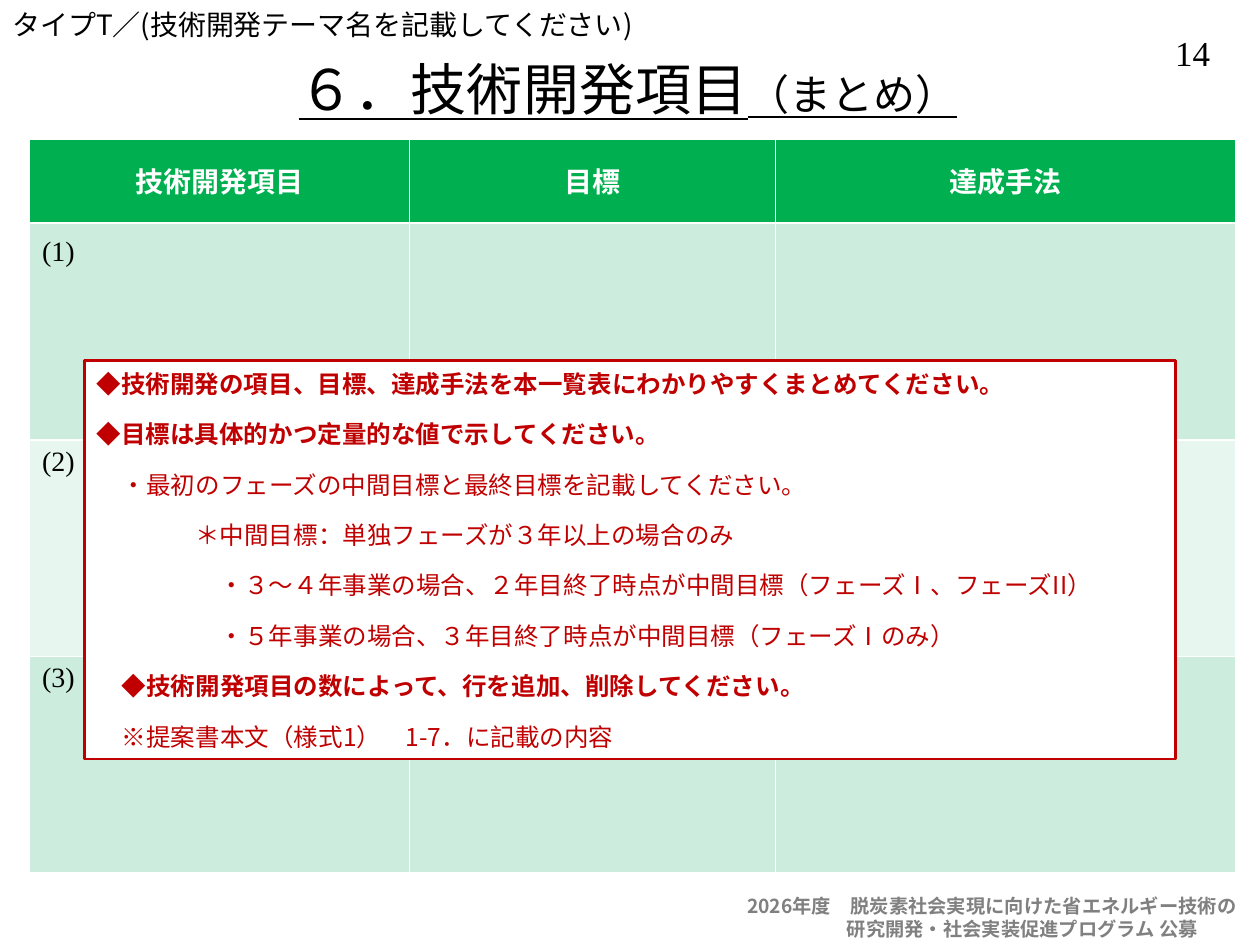
import pptx
import pptx.util
import pptx.dml.color
import pptx.enum.shapes
import pptx.enum.text
import pptx.oxml

Pt = pptx.util.Pt
PP = pptx.enum.text.PP_ALIGN
MID = pptx.enum.text.MSO_ANCHOR.MIDDLE
GOTHIC = "Noto Sans CJK JP"
SERIF = "Times New Roman"
NS = 'xmlns:a="http://schemas.openxmlformats.org/drawingml/2006/main"'


def rgb(value):
    return pptx.dml.color.RGBColor.from_string(value)


def style(r, size, color, bold=False, font=GOTHIC):
    r.font.size = Pt(size)
    r.font.color.rgb = rgb(color)
    r.font.bold = bold
    r.font.name = font
    ea = pptx.oxml.parse_xml(f'<a:ea {NS} typeface="{GOTHIC}"/>')
    r.font._element.find(pptx.oxml.ns.qn("a:latin")).addnext(ea)


prs = pptx.Presentation()
prs.slide_width, prs.slide_height = Pt(720), Pt(540)
s = prs.slides.add_slide(prs.slide_layouts[6])

# Page number, theme line, footer and title: box, size, colour, bold, font,
# alignment, and paragraphs as (left indent, text)
texts = [
    ((658, 13, 47, 31), 20, "000000", False, SERIF, PP.CENTER, [(0, "14")]),
    ((0, -0.7, 605, 27), 16, "000000", False, GOTHIC, PP.LEFT,
     [(0, "タイプT／(技術開発テーマ名を記載してください)")]),
    ((419.8, 506.2, 300.2, 33.8), 11, "808080", True, GOTHIC, PP.LEFT,
     [(0, "2026年度　脱炭素社会実現に向けた省エネルギー技術の"),
      (57, "研究開発・社会実装促進プログラム 公募")]),
    ((53, 25.2, 612, 50.4), 32, "000000", False, GOTHIC, PP.CENTER,
     [(0, "６．技術開発項目")]),
]
for box, size, color, bold, font, align, lines in texts:
    sp = s.shapes.add_textbox(*map(Pt, box))
    tf = sp.text_frame
    tf.word_wrap = True
    tf.margin_top = Pt(4.8)
    for i, (indent, text) in enumerate(lines):
        p = tf.add_paragraph() if i else tf.paragraphs[0]
        p.text = text
        p.alignment = align
        p.line_spacing = Pt(size * 1.2)
        if indent:
            p._p.get_or_add_pPr().set("marL", str(Pt(indent)))
        style(p.runs[0], size, color, bold, font)

# The title, last in the list, ends in a smaller run and is underlined
tf.vertical_anchor = MID
tf.margin_top = Pt(3.6)
r = p.add_run()
r.text = "（まとめ）"
style(r, 24, "000000")
for r in p.runs:
    r.font.underline = True

# Summary table
rows = [["技術開発項目", "目標", "達成手法"],
        ["(1)　", "", ""], ["(2)", "", ""], ["(3)", "", ""]]
fills = ["00B050", "CCECDE", "E7F6EF", "CCECDE"]
widths = [217.2, 209.2, 262.8]
heights = [48.7, 123.8, 123.8, 123.8]
rules = [3, 1.5, 1, 1, 1]  # horizontal rules from top to bottom
table = s.shapes.add_table(4, 3, Pt(16.8), Pt(78.8),
                           Pt(sum(widths)), Pt(sum(heights))).table
for col, width in zip(table.columns, widths):
    col.width = Pt(width)
for i, row in enumerate(rows):
    table.rows[i].height = Pt(heights[i])
    for j, text in enumerate(row):
        cell = table.cell(i, j)
        tcPr = cell._tc.get_or_add_tcPr()
        for side, w in zip("LRTB", (1, 1, rules[i], rules[i + 1])):
            tcPr.append(pptx.oxml.parse_xml(
                f'<a:ln{side} {NS} w="{Pt(w)}"><a:solidFill>'
                f'<a:srgbClr val="FFFFFF"/></a:solidFill></a:ln{side}>'))
        cell.fill.solid()
        cell.fill.fore_color.rgb = rgb(fills[i])
        if not text:
            continue
        p = cell.text_frame.paragraphs[0]
        p.text = text
        if i == 0:
            p.alignment = PP.CENTER
            cell.vertical_anchor = MID
        style(p.runs[0], 16, "000000" if i else "FFFFFF", i == 0, SERIF)

# Instruction box: (left indent, bold, text)
notes = [
    (0, True, "◆技術開発の項目、目標、達成手法を本一覧表にわかりやすくまとめてください。"),
    (0, True, "◆目標は具体的かつ定量的な値で示してください。"),
    (14.4, False, "・最初のフェーズの中間目標と最終目標を記載してください。"),
    (56.4, False, "＊中間目標：単独フェーズが３年以上の場合のみ"),
    (70.4, False, "・３～４年事業の場合、２年目終了時点が中間目標（フェーズⅠ、フェーズII）"),
    (70.4, False, "・５年事業の場合、３年目終了時点が中間目標（フェーズⅠのみ）"),
    (14.4, True, "◆技術開発項目の数によって、行を追加、削除してください。"),
    (14.4, False, "※提案書本文（様式1）　1-7．に記載の内容"),
]
sp = s.shapes.add_shape(pptx.enum.shapes.MSO_SHAPE.RECTANGLE,
                        Pt(48.2), Pt(206), Pt(623.5), Pt(227.8))
sp.shadow.inherit = False
sp.fill.solid()
sp.fill.fore_color.rgb = rgb("FFFFFF")
sp.line.color.rgb = rgb("C00000")
sp.line.width = Pt(1.5)
tf = sp.text_frame
tf.word_wrap = True
tf.vertical_anchor = pptx.enum.text.MSO_ANCHOR.TOP
tf.margin_top = Pt(4.8)
for i, (indent, bold, text) in enumerate(notes):
    p = tf.add_paragraph() if i else tf.paragraphs[0]
    p.text = text
    p.alignment = PP.LEFT
    p.line_spacing = Pt(16.8)
    if i:
        p.space_before = Pt(12)
    p._p.get_or_add_pPr().set("marL", str(Pt(indent)))
    style(p.runs[0], 14, "C00000", bold)

prs.save("out.pptx")
